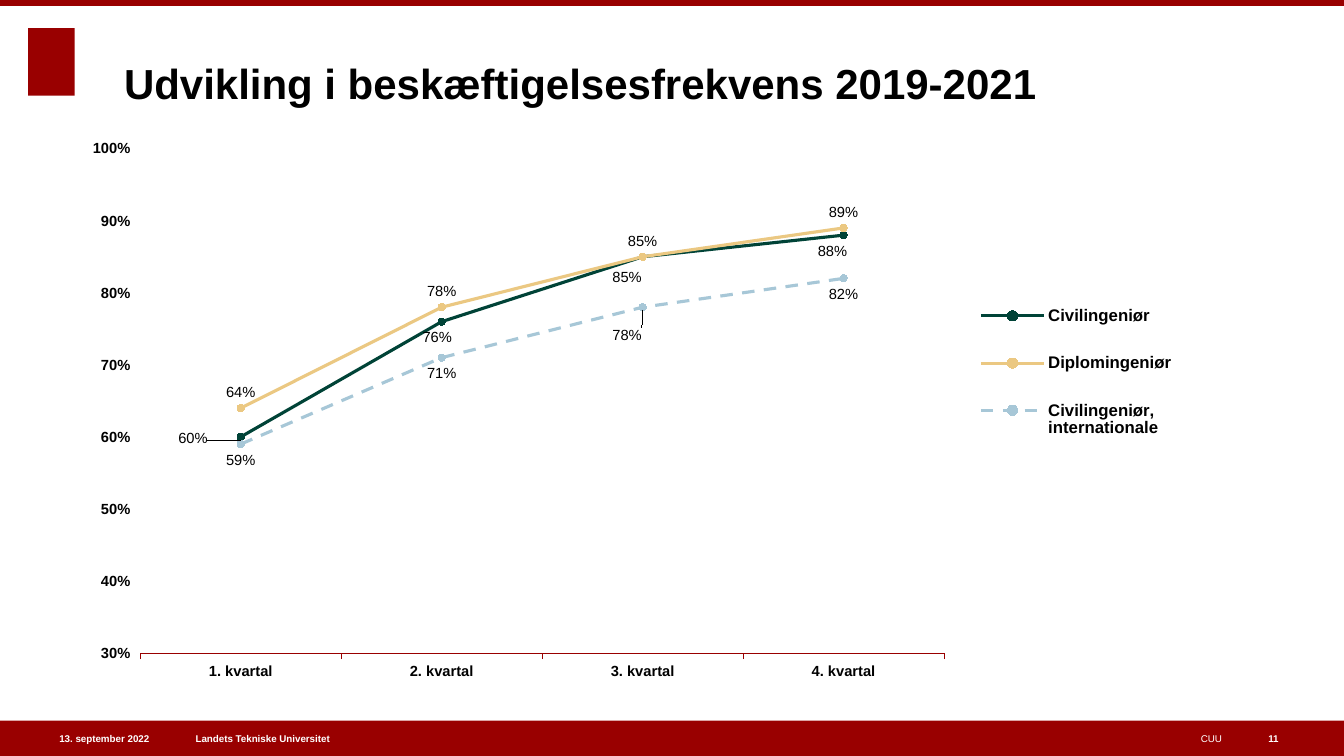
from lxml import etree
from pptx import Presentation
from pptx.chart.data import CategoryChartData
from pptx.dml.color import RGBColor
from pptx.enum.chart import (XL_CHART_TYPE, XL_LABEL_POSITION as LabelPos,
                             XL_LEGEND_POSITION, XL_MARKER_STYLE, XL_TICK_MARK)
from pptx.enum.dml import MSO_LINE
from pptx.enum.shapes import MSO_SHAPE
from pptx.enum.text import MSO_ANCHOR as Anchor, PP_ALIGN as Align
from pptx.oxml import parse_xml
from pptx.oxml.ns import nsdecls, qn
from pptx.util import Inches, Pt

COLORS = {"red": "990000", "white": "FFFFFF", "black": "000000",
          "green": "004337", "sand": "EBC882", "blue": "A7C7D7"}
FONT = "Arial"
PERCENT = "0%"

TITLE = "Udvikling i beskæftigelsesfrekvens 2019-2021"
FOOTER_TOP, FOOTER_HEIGHT = 7.15, 0.35
# text, left, width, alignment, bold
FOOTER = [
    ("Landets Tekniske Universitet", 1.94, 3.72, Align.LEFT, True),
    ("13. september 2022", 0.27, 1.21, Align.RIGHT, True),
    ("CUU", 6.11, 6.01, Align.RIGHT, False),
    ("11", 12.58, 0.47, Align.LEFT, True),
]
RED_BLOCKS = [
    (0, FOOTER_TOP, 13.33, FOOTER_HEIGHT),
    (0, 0, 13.33, 0.06),
    (0.28, 0.28, 0.46, 0.67),
]

QUARTERS = ["1. kvartal", "2. kvartal", "3. kvartal", "4. kvartal"]
# "nudges" shifts single labels by a share of the chart's width and height
PROGRAMMES = [
    {"name": "Civilingeniør", "rates": (0.60, 0.76, 0.85, 0.88),
     "color": "green", "dash": None, "labels": LabelPos.BELOW,
     "nudges": {0: (-0.043, -0.023), 1: (-0.004, 0),
                2: (-0.014, 0.007), 3: (-0.01, 0)}},
    {"name": "Diplomingeniør", "rates": (0.64, 0.78, 0.85, 0.89),
     "color": "sand", "dash": None, "labels": LabelPos.ABOVE, "nudges": {}},
    {"name": "Civilingeniør, internationale", "rates": (0.59, 0.71, 0.78, 0.82),
     "color": "blue", "dash": MSO_LINE.DASH, "labels": LabelPos.BELOW,
     "nudges": {2: (-0.014, 0.02)}},
]
PLOT_AREA = {"x": 0.042, "y": 0.065, "w": 0.724, "h": 0.802}
LEGEND_AREA = {"x": 0.79, "y": 0.27, "w": 0.19, "h": 0.3}


def rgb(name):
    return RGBColor.from_string(COLORS[name])


def style(font, size, color="black", bold=False):
    font.name, font.size, font.bold = FONT, Pt(size), bold
    font.color.rgb = rgb(color)


def add_block(slide, *box):
    block = slide.shapes.add_shape(MSO_SHAPE.RECTANGLE, *map(Inches, box))
    block.shadow.inherit = False
    block.fill.solid()
    block.fill.fore_color.rgb = rgb("red")
    block.line.fill.background()


def add_text(slide, text, box, size, color, bold, align=Align.LEFT,
             anchor=Anchor.MIDDLE, inset_top=0):
    frame = slide.shapes.add_textbox(*map(Inches, box)).text_frame
    frame.word_wrap = True
    frame.vertical_anchor = anchor
    frame.margin_left = frame.margin_right = frame.margin_bottom = 0
    frame.margin_top = Inches(inset_top)
    paragraph = frame.paragraphs[0]
    paragraph.text = text
    paragraph.alignment = align
    style(paragraph.font, size, color, bold)


def manual_layout(values, edge_modes=(), inner=False):
    """Build a c:layout element from x, y, w and h shares."""
    layout = parse_xml(f"<c:layout {nsdecls('c')}><c:manualLayout/></c:layout>")
    settings = [("layoutTarget", "inner")] if inner else []
    settings += [(mode, "edge") for mode in edge_modes]
    settings += values.items()
    for tag, value in settings:
        etree.SubElement(layout[0], qn(f"c:{tag}")).set("val", str(value))
    return layout


def place(element, layout, after=None):
    """Replace an element's layout, putting it first or after a child."""
    for old in element.findall(qn("c:layout")):
        element.remove(old)
    if after is None:
        element.insert(0, layout)
    else:
        element.find(qn(after)).addnext(layout)


def format_programme(series, programme):
    color = rgb(programme["color"])
    series.smooth = False
    line = series.format.line
    line.color.rgb = color
    line.width = Pt(2.25)
    if programme["dash"]:
        line.dash_style = programme["dash"]
    marker = series.marker
    marker.style, marker.size = XL_MARKER_STYLE.CIRCLE, 5
    marker.format.fill.solid()
    marker.format.fill.fore_color.rgb = color
    marker.format.line.color.rgb = color

    labels = series.data_labels
    labels.show_value = True
    labels.number_format, labels.number_format_is_linked = PERCENT, False
    labels.position = programme["labels"]
    style(labels.font, 10.5)
    for index, (dx, dy) in programme["nudges"].items():
        label = series.points[index].data_label
        style(label.font, 10.5)
        label.position = programme["labels"]
        element = next(item for item in labels._element.findall(qn("c:dLbl"))
                       if item.find(qn("c:idx")).get("val") == str(index))
        place(element, manual_layout({"x": dx, "y": dy}), "c:idx")
        element.find(qn("c:layout")).addnext(parse_xml(
            f'<c:numFmt {nsdecls("c")} formatCode="{PERCENT}" sourceLinked="0"/>'))


def add_rate_chart(slide):
    rates = CategoryChartData(number_format=PERCENT)
    rates.categories = QUARTERS
    for programme in PROGRAMMES:
        rates.add_series(programme["name"], programme["rates"])
    chart = slide.shapes.add_chart(
        XL_CHART_TYPE.LINE_MARKERS,
        *map(Inches, (0.92, 1.07, 11.02, 6.24)), rates).chart
    chart.has_title = False
    style(chart.font, 8)
    plot = chart.plots[0]
    plot.vary_by_categories = False
    for series, programme in zip(plot.series, PROGRAMMES):
        format_programme(series, programme)

    quarters, share = chart.category_axis, chart.value_axis
    for axis in (quarters, share):
        axis.has_major_gridlines = False
        axis.major_tick_mark = XL_TICK_MARK.OUTSIDE
        axis.minor_tick_mark = XL_TICK_MARK.NONE
        style(axis.tick_labels.font, 10.5, bold=True)
    quarters.format.line.color.rgb = rgb("red")
    quarters.format.line.width = Pt(0.1)
    share.format.line.fill.background()
    share.minimum_scale, share.maximum_scale, share.major_unit = 0.3, 1, 0.1
    share.tick_labels.number_format = PERCENT
    share.tick_labels.number_format_is_linked = False

    chart.has_legend = True
    legend = chart.legend
    legend.position = XL_LEGEND_POSITION.RIGHT
    legend.include_in_layout = False
    style(legend.font, 12, bold=True)
    edges = ("xMode", "yMode")
    place(legend._element, manual_layout(LEGEND_AREA, edges), "c:legendPos")
    plot_area = chart._chartSpace.chart.plotArea
    place(plot_area, manual_layout(PLOT_AREA, edges, inner=True))


def main():
    prs = Presentation()
    prs.slide_width, prs.slide_height = Inches(13.33), Inches(7.5)
    slide = prs.slides.add_slide(prs.slide_layouts[6])
    for block in RED_BLOCKS:
        add_block(slide, *block)
    for text, left, width, align, bold in FOOTER:
        add_text(slide, text, (left, FOOTER_TOP, width, FOOTER_HEIGHT),
                 7, "white", bold, align)
    add_text(slide, TITLE, (1.23, 0.47, 10.18, 1.06), 30, "black", True,
             anchor=Anchor.TOP, inset_top=0.1)
    add_rate_chart(slide)
    prs.save("out.pptx")


if __name__ == "__main__":
    main()
